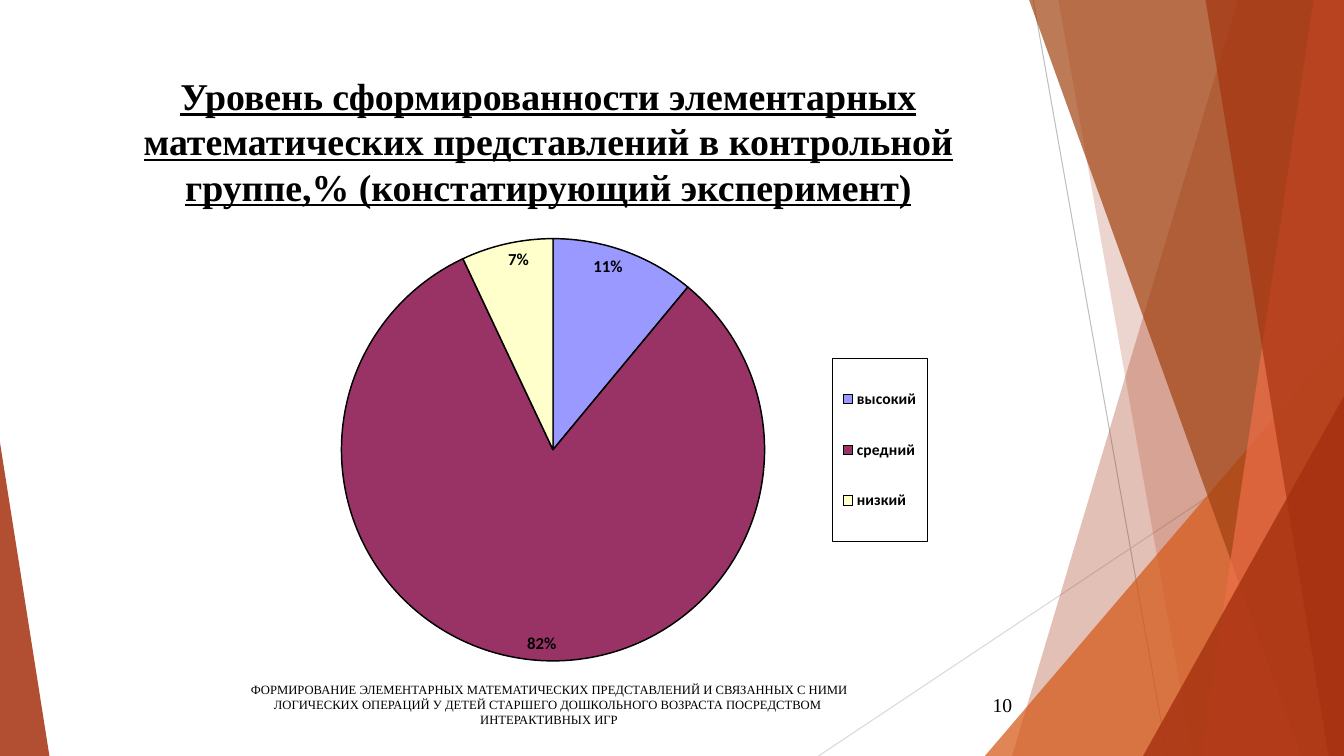
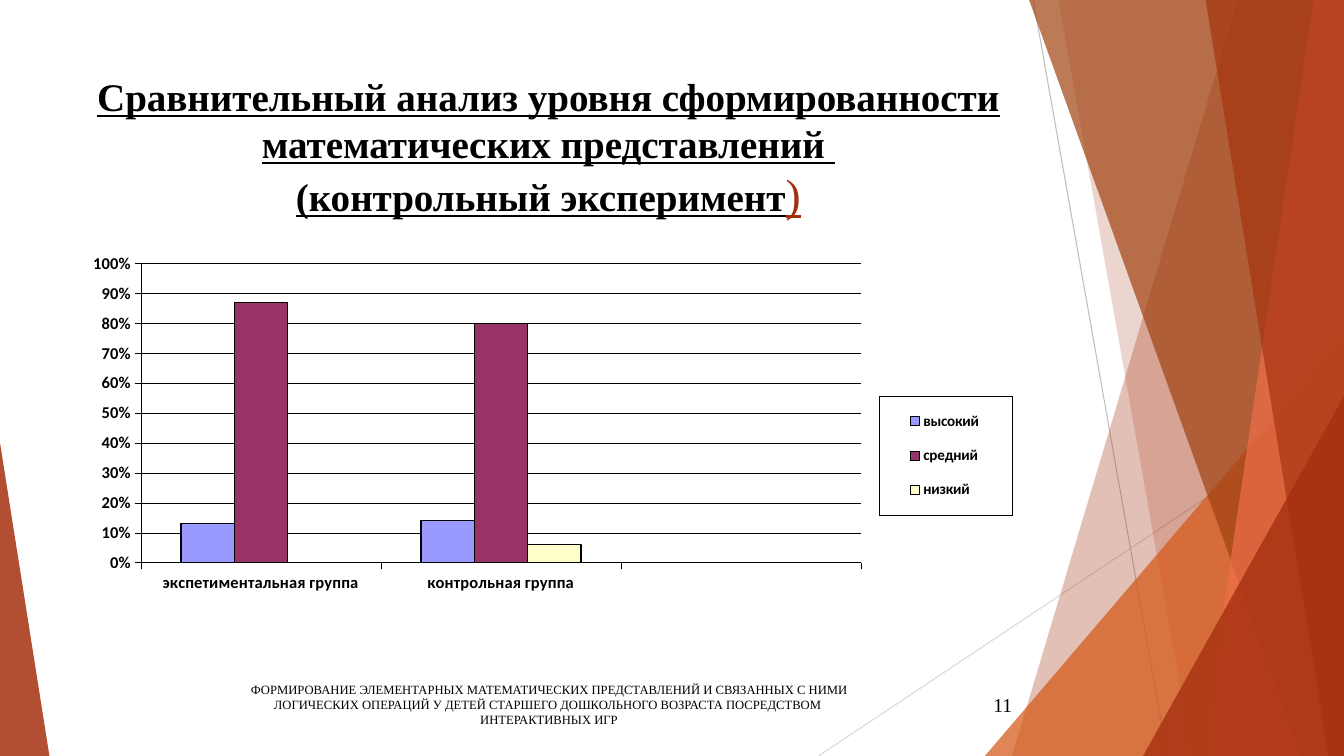
"""Build two slides of survey results with a shared faceted decoration."""
import lxml.etree
import pptx
import pptx.chart.data
import pptx.dml.color
import pptx.enum.chart
import pptx.enum.shapes
import pptx.enum.text
import pptx.oxml.ns
import pptx.util

SLIDE_WIDTH = pptx.util.Inches(13.33)
SLIDE_HEIGHT = pptx.util.Inches(7.5)
TITLE_FRAME = (5.55, 8.93, 70.5, 19.2)
CHART_FRAME = (5.55, 31.47, 70.5, 56.53)
FOOTER_FRAME = (15, 90.53, 51.68, 5.33)
NUMBER_FRAME = (70.43, 90.53, 5.62, 5.33)
BLACK = "000000"
RUST = "A5300F"
ORANGE = "D55816"
BROWN = "A04210"
CORAL = "EE6E4A"
LEVEL_COLORS = ("9999FF", "993366", "FFFFCC")
TEXT_FONT = "Times New Roman"
CHART_FONT = "Calibri"
FOOTER = (
    "ФОРМИРОВАНИЕ ЭЛЕМЕНТАРНЫХ МАТЕМАТИЧЕСКИХ ПРЕДСТАВЛЕНИЙ И СВЯЗАННЫХ С НИМИ "
    "ЛОГИЧЕСКИХ ОПЕРАЦИЙ У ДЕТЕЙ СТАРШЕГО ДОШКОЛЬНОГО ВОЗРАСТА ПОСРЕДСТВОМ \n"
    "ИНТЕРАКТИВНЫХ ИГР"
)
ALIGN = pptx.enum.text.PP_ALIGN
ANCHOR = pptx.enum.text.MSO_ANCHOR


def across(percent):
    """Return a percentage of the slide width."""
    return int(SLIDE_WIDTH * percent / 100)


def down(percent):
    """Return a percentage of the slide height."""
    return int(SLIDE_HEIGHT * percent / 100)


def place(frame):
    """Turn left, top, width and height in percent into lengths."""
    left, top, width, height = frame
    return across(left), down(top), across(width), down(height)


def color(hex_text):
    """Return the colour for a hex string."""
    return pptx.dml.color.RGBColor.from_string(hex_text)


def add_child(parent, tag, **attributes):
    """Append an XML element with the given attributes."""
    return lxml.etree.SubElement(parent, pptx.oxml.ns.qn(tag), **attributes)


def style_font(font, size, name, bold=False, hex_text=BLACK):
    """Set the look of a font."""
    font.size = pptx.util.Pt(size)
    font.name = name
    font.bold = bold
    font.color.rgb = color(hex_text)


def outline(line, width, hex_text=BLACK):
    """Set the colour and width of a line."""
    line.color.rgb = color(hex_text)
    line.width = pptx.util.Pt(width)


def paint(shape, hex_text, opacity):
    """Give a shape a translucent fill without line or shadow."""
    shape.shadow.inherit = False
    shape.line.fill.background()
    shape.fill.solid()
    shape.fill.fore_color.rgb = color(hex_text)
    tint = shape.element.xpath("./p:spPr/a:solidFill/a:srgbClr")[0]
    add_child(tint, "a:alpha", val=str(opacity * 1000))


def add_hairline(slide, start, end, hex_text):
    """Draw a thin line between two points in percent."""
    connector = slide.shapes.add_connector(
        pptx.enum.shapes.MSO_CONNECTOR.STRAIGHT,
        across(start[0]), down(start[1]), across(end[0]), down(end[1]))
    outline(connector.line, 0.75, hex_text)
    add_child(connector.element.xpath("./p:spPr")[0], "a:effectLst")


def add_band(slide, top_x, bottom_x, hex_text, opacity):
    """Draw a full-height band from a slanted edge to the right side."""
    builder = slide.shapes.build_freeform(across(top_x), 0)
    builder.add_line_segments(
        [(across(100), 0), (across(100), down(100)), (across(bottom_x), down(100))])
    paint(builder.convert_to_shape(), hex_text, opacity)


def add_corner(slide, left, top, width, apex, hex_text, opacity):
    """Draw a right triangle standing on the bottom edge."""
    shape = slide.shapes.add_shape(
        pptx.enum.shapes.MSO_SHAPE.ISOSCELES_TRIANGLE,
        *place((left, top, width, 100 - top)))
    shape.adjustments[0] = apex
    paint(shape, hex_text, opacity)


def add_decoration(slide):
    """Draw the lines, bands and corners that every slide has."""
    add_hairline(slide, (76.88, 0), (86.85, 100), "BFBFBF")
    add_hairline(slide, (100, 53.73), (60.9, 100), "D9D9D9")
    add_band(slide, 92.1, 75.3, RUST, 30)
    add_band(slide, 78.75, 88.73, RUST, 20)
    add_corner(slide, 73.28, 44.4, 26.72, 1, ORANGE, 72)
    add_band(slide, 76.57, 96.83, BROWN, 70)
    add_band(slide, 97.73, 89.4, CORAL, 70)
    add_band(slide, 89.7, 98.85, RUST, 65)
    add_corner(slide, 85.05, 52.4, 14.95, 1, RUST, 80)
    add_corner(slide, 0, 58.53, 3.68, 0, RUST, 85)


def add_text(slide, frame, text, size, alignment, anchor=ANCHOR.MIDDLE, bold=False):
    """Add a wrapped text box and return its text frame."""
    text_frame = slide.shapes.add_textbox(*place(frame)).text_frame
    text_frame.word_wrap = True
    text_frame.vertical_anchor = anchor
    text_frame.text = text
    for paragraph in text_frame.paragraphs:
        paragraph.alignment = alignment
        for run in paragraph.runs:
            style_font(run.font, size, TEXT_FONT, bold)
            run.font.underline = bold
    return text_frame


def add_slide(presentation, title, title_size, number):
    """Add a decorated slide and return it with its title paragraph."""
    slide = presentation.slides.add_slide(presentation.slide_layouts[6])
    add_decoration(slide)
    title_frame = add_text(
        slide, TITLE_FRAME, title, title_size, ALIGN.CENTER, ANCHOR.TOP, True)
    add_text(slide, FOOTER_FRAME, FOOTER, 9, ALIGN.CENTER)
    add_text(slide, NUMBER_FRAME, str(number), 14, ALIGN.RIGHT)
    return slide, title_frame.paragraphs[0]


def set_layout(parent, position, shares, inner=False):
    """Fix a chart part at the given shares of the chart's size."""
    for old_layout in parent.findall(pptx.oxml.ns.qn("c:layout")):
        parent.remove(old_layout)
    layout = add_child(parent, "c:layout")
    parent.insert(position, layout)
    manual = add_child(layout, "c:manualLayout")
    if inner:
        add_child(manual, "c:layoutTarget", val="inner")
    for side in ("x", "y"):
        add_child(manual, f"c:{side}Mode", val="edge")
    for side, share in zip("xywh", shares):
        add_child(manual, f"c:{side}", val=str(share))


def add_chart(slide, kind, data, size, plot_shares):
    """Add a chart with a fixed plot area."""
    chart = slide.shapes.add_chart(kind, *place(CHART_FRAME), data).chart
    chart.has_title = False
    style_font(chart.font, size, CHART_FONT, True)
    set_layout(chart.element.xpath(".//c:plotArea")[0], 0, plot_shares, True)
    return chart


def add_legend(chart, size, shares):
    """Add a framed legend at a fixed place."""
    chart.has_legend = True
    chart.legend.position = pptx.enum.chart.XL_LEGEND_POSITION.RIGHT
    chart.legend.include_in_layout = False
    style_font(chart.legend.font, size, CHART_FONT, True)
    legend = chart.element.xpath(".//c:legend")[0]
    set_layout(legend, 1, shares)
    properties = add_child(legend, "c:spPr")
    line = add_child(properties, "a:ln", w=str(pptx.util.Pt(0.75)))
    add_child(add_child(line, "a:solidFill"), "a:srgbClr", val=BLACK)
    legend.find(pptx.oxml.ns.qn("c:txPr")).addprevious(properties)


def fill_levels(parts):
    """Colour the slices or series that stand for the levels."""
    for part, hex_text in zip(parts, LEVEL_COLORS):
        part.format.fill.solid()
        part.format.fill.fore_color.rgb = color(hex_text)
        outline(part.format.line, 1.05)


def add_level_pie(slide):
    """Add the pie of levels in the control group."""
    data = pptx.chart.data.CategoryChartData(number_format="0%")
    data.categories = ("высокий", "средний", "низкий")
    data.add_series("Series 1", (0.11, 0.82, 0.07))
    chart = add_chart(slide, pptx.enum.chart.XL_CHART_TYPE.PIE, data, 12,
                      (0.28, 0, 0.45, 0.99))
    add_legend(chart, 11.1, (0.8, 0.28, 0.1, 0.43))
    plot = chart.plots[0]
    plot.vary_by_categories = True
    fill_levels([plot.series[0].points[index] for index in range(3)])
    plot.has_data_labels = True
    labels = plot.data_labels
    labels.show_value = True
    labels.show_percentage = False
    labels.number_format = "0%"
    labels.number_format_is_linked = False
    labels.position = pptx.enum.chart.XL_LABEL_POSITION.INSIDE_END
    style_font(labels.font, 12, CHART_FONT, True)


def add_group_columns(slide):
    """Add the columns that compare both groups."""
    data = pptx.chart.data.CategoryChartData(number_format="0%")
    data.categories = ("экспетиментальная группа", "контрольная группа", "")
    data.add_series("высокий ", (0.13, 0.14, None))
    data.add_series("средний", (0.87, 0.8, None))
    data.add_series("низкий", (0, 0.06, None))
    chart = add_chart(slide, pptx.enum.chart.XL_CHART_TYPE.COLUMN_CLUSTERED, data,
                      11.8, (0.07, 0.06, 0.76, 0.7))
    add_legend(chart, 10.8, (0.85, 0.37, 0.14, 0.28))
    plot = chart.plots[0]
    plot.vary_by_categories = False
    plot.gap_width = 150
    plot.overlap = 0
    fill_levels(plot.series)
    for axis in (chart.category_axis, chart.value_axis):
        axis.major_tick_mark = pptx.enum.chart.XL_TICK_MARK.OUTSIDE
        style_font(axis.tick_labels.font, 11.8, CHART_FONT, True)
        outline(axis.format.line, 0.25)
    chart.category_axis.tick_label_position = pptx.enum.chart.XL_TICK_LABEL_POSITION.LOW
    value_axis = chart.value_axis
    value_axis.minimum_scale = 0
    value_axis.maximum_scale = 1
    value_axis.major_unit = 0.1
    value_axis.has_major_gridlines = True
    outline(value_axis.major_gridlines.format.line, 0.25)
    value_axis.tick_labels.number_format = "0%"
    value_axis.tick_labels.number_format_is_linked = False


def main():
    """Build and save the presentation."""
    presentation = pptx.Presentation()
    presentation.slide_width = SLIDE_WIDTH
    presentation.slide_height = SLIDE_HEIGHT

    slide, _ = add_slide(
        presentation,
        "Уровень сформированности элементарных математических представлений "
        "в контрольной группе,% (констатирующий эксперимент)", 27, 10)
    add_level_pie(slide)

    slide, title = add_slide(
        presentation,
        "Сравнительный анализ уровня сформированности математических "
        "представлений \v(контрольный эксперимент", 27.9, 11)
    bracket = title.add_run()
    bracket.text = ")"
    style_font(bracket.font, 32.4, TEXT_FONT, hex_text=RUST)
    bracket.font.underline = True
    add_group_columns(slide)

    presentation.save("out.pptx")


if __name__ == "__main__":
    main()
